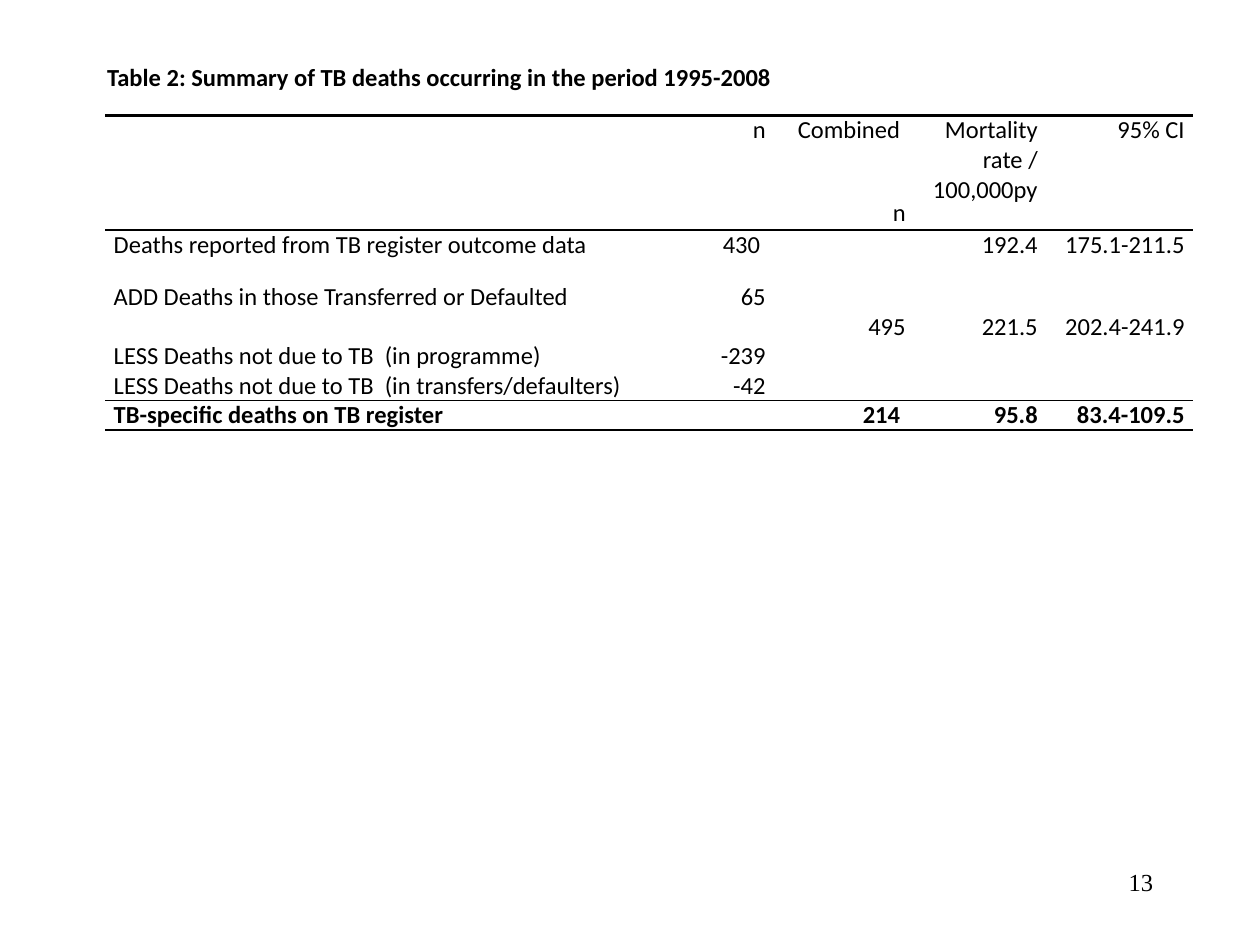
from lxml import etree
from pptx import Presentation
from pptx.dml.color import RGBColor
from pptx.enum import text
from pptx.oxml import ns
from pptx.util import Pt

TITLE = "Table 2: Summary of TB deaths occurring in the period 1995-2008"
COLS = [340, 42.5, 80, 75.5, 84]
HEIGHTS = [65.5, 30] + [15] * 5
ROWS = [
    ["", "n", "Combined \nn", "Mortality rate / 100,000py", "95% CI"],
    ["Deaths reported from TB register outcome data", "430 ", "", "192.4", "175.1-211.5"],
    ["ADD Deaths in those Transferred or Defaulted", "65", "", "", ""],
    ["", "", "495", "221.5", "202.4-241.9"],
    ["LESS Deaths not due to TB  (in programme)", "-239", "", "", ""],
    ["LESS Deaths not due to TB  (in transfers/defaulters)", "-42", "", "", ""],
    ["TB-specific deaths on TB register", "", "214 ", "95.8", "83.4-109.5"],
]
TOP = {0: 1.5, 1: 1.5, 6: 1}
BOTTOM = {0: 1.5, 5: 1, 6: 1.5}
NO_STYLE = "{2D5ABB26-0587-4C30-8999-92F81FD0307C}"


def rgb(value):
    """Return a colour from a hex string."""
    return RGBColor.from_string(value)


class Deck:
    """Holds the text style and the slide being built."""

    font, size, color = "Calibri", 14, "000000"

    def __init__(self, s):
        """Keep the slide to draw on."""
        self.s = s

    def style(self, p, align, bold=False, font=None):
        """Format a paragraph and its runs."""
        p.alignment = align
        for r in p.runs:
            r.font.name = font or self.font
            r.font.size = Pt(self.size)
            r.font.bold = bold
            r.font.color.rgb = rgb(self.color)

    def title(self, label, x, y, w, h):
        """Place the title placeholder."""
        sp = self.s.shapes.title
        sp.left, sp.top, sp.width, sp.height = Pt(x), Pt(y), Pt(w), Pt(h)
        tf = sp.text_frame
        tf.text = label
        tf.auto_size = text.MSO_AUTO_SIZE.NONE
        tf.vertical_anchor = text.MSO_ANCHOR.TOP
        self.style(tf.paragraphs[0], text.PP_ALIGN.LEFT, True)

    def page_number(self, label, x, y, w, h):
        """Add the page number."""
        tf = self.s.shapes.add_textbox(Pt(x), Pt(y), Pt(w), Pt(h)).text_frame
        tf.word_wrap = True
        tf.text = label
        self.style(tf.paragraphs[0], text.PP_ALIGN.RIGHT, font="Times New Roman")

    def border(self, cell, side, width):
        """Draw one cell border, or clear it at zero width."""
        tc_pr = cell._tc.get_or_add_tcPr()
        ln = etree.SubElement(tc_pr, ns.qn(f"a:ln{side}"), w=str(Pt(width)))
        if width:
            fill = etree.SubElement(ln, ns.qn("a:solidFill"))
            etree.SubElement(fill, ns.qn("a:srgbClr"), val=self.color)
        else:
            etree.SubElement(ln, ns.qn("a:noFill"))

    def cell(self, cell, label, align, bold):
        """Fill one table cell."""
        cell.margin_left = cell.margin_right = Pt(5)
        cell.margin_top = cell.margin_bottom = 0
        tf = cell.text_frame
        tf.text = label
        for p in tf.paragraphs:
            p.space_before, p.space_after = Pt(24), Pt(6)
            self.style(p, align, bold)
            if not label:
                etree.SubElement(p._p, ns.qn("a:endParaRPr"), sz=str(self.size * 100))

    def table(self, rows, x, y, cols, heights):
        """Add the table with its horizontal rules."""
        frame = self.s.shapes.add_table(
            len(rows), len(cols), Pt(x), Pt(y), Pt(sum(cols)), Pt(sum(heights)))
        tbl = frame.table
        tbl.first_row = tbl.horz_banding = False
        tbl._tbl.tblPr.find(ns.qn("a:tableStyleId")).text = NO_STYLE
        for col, width in zip(tbl.columns, cols):
            col.width = Pt(width)
        for i, row in enumerate(rows):
            tbl.rows[i].height = Pt(heights[i])
            for j, label in enumerate(row):
                cell = tbl.cell(i, j)
                align = text.PP_ALIGN.RIGHT if j else text.PP_ALIGN.JUSTIFY
                self.cell(cell, label, align, i == len(rows) - 1)
                widths = {"L": 0, "R": 0, "T": TOP.get(i, 0), "B": BOTTOM.get(i, 0)}
                for side, width in widths.items():
                    self.border(cell, side, width)
                cell.fill.background()


def main():
    """Build and save the slide."""
    prs = Presentation()
    prs.slide_width, prs.slide_height = Pt(720), Pt(540)
    deck = Deck(prs.slides.add_slide(prs.slide_layouts[5]))
    deck.page_number("13", 516, 492, 150, 36)
    deck.table(ROWS, 60, 66, COLS, HEIGHTS)
    deck.title(TITLE, 54, 32, 607, 24.5)
    prs.save("out.pptx")


if __name__ == "__main__":
    main()
